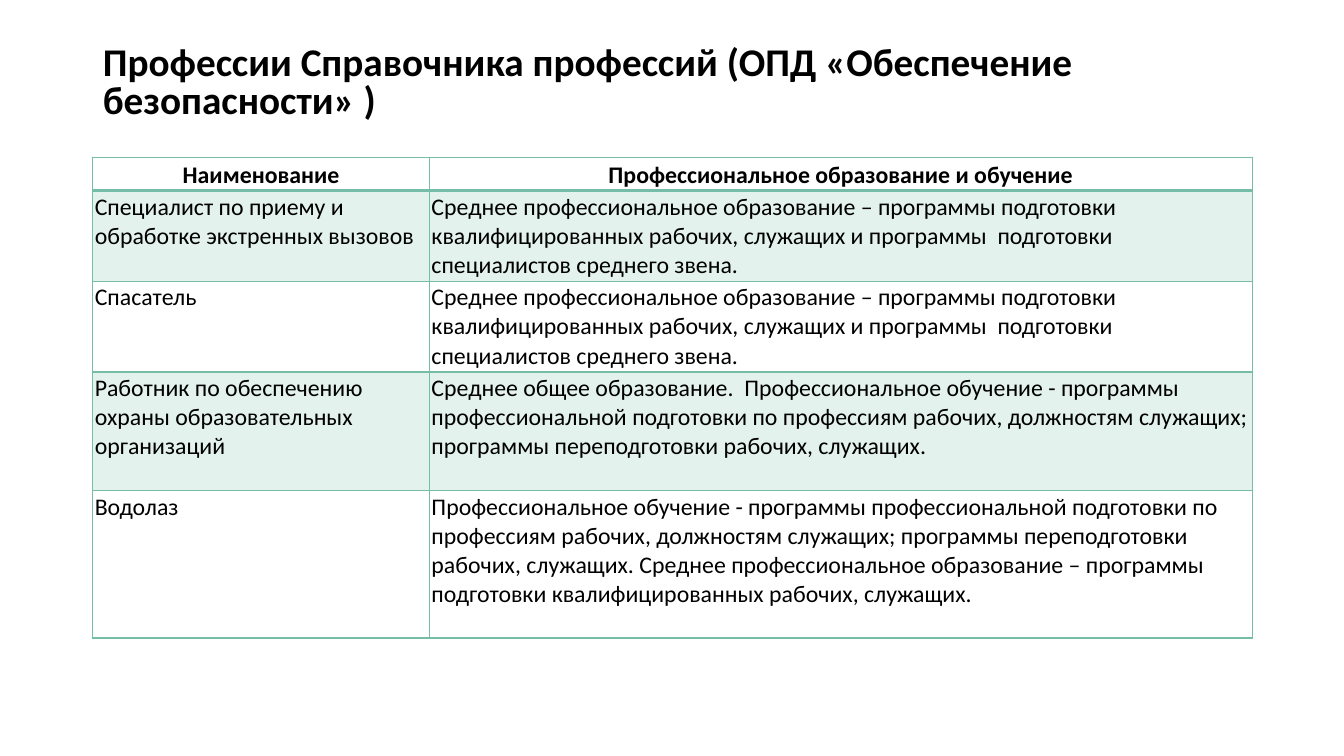
"""Build the slide with a table of security professions."""
from lxml.etree import SubElement
from pptx import Presentation
from pptx.dml.color import RGBColor
from pptx.enum.text import MSO_ANCHOR as Anchor, MSO_AUTO_SIZE as Fit, PP_ALIGN as Align
from pptx.oxml.ns import qn
from pptx.util import Inches, Pt

TITLE = "Профессии Справочника профессий (ОПД «Обеспечение безопасности» )"
MIDDLE = ("Среднее профессиональное образование – программы подготовки "
          "квалифицированных рабочих, служащих и программы  подготовки "
          "специалистов среднего звена.")
ROWS = [
    ("Наименование", "Профессиональное образование и обучение"),
    ("Специалист по приему и обработке экстренных вызовов", MIDDLE),
    ("Спасатель", MIDDLE),
    ("Работник по обеспечению охраны образовательных организаций",
     "Среднее общее образование.  Профессиональное обучение - программы "
     "профессиональной подготовки по профессиям рабочих, должностям служащих; "
     "программы переподготовки рабочих, служащих."),
    ("Водолаз",
     "Профессиональное обучение - программы профессиональной подготовки по "
     "профессиям рабочих, должностям служащих; программы переподготовки рабочих, "
     "служащих. Среднее профессиональное образование – программы подготовки "
     "квалифицированных рабочих, служащих."),
]
WIDTHS = [3.34, 8.16]
HEIGHTS = [0.33, 0.9, 0.9, 1.18, 1.46]
LEFT, WIDTH = 0.92, sum(WIDTHS)
GREEN, PALE, BLACK = "75BDA7", "E3F2ED", "000000"


def color(code):
    return RGBColor.from_string(code)


def style(para, size, bold, align):
    para.alignment = align
    font = para.font
    font.name, font.size, font.bold = "Calibri", Pt(size), bold
    font.color.rgb = color(BLACK)


def border(cell, side, width):
    line = SubElement(cell._tc.get_or_add_tcPr(), qn(f"a:ln{side}"), w=str(Pt(width)))
    fill = SubElement(line, qn("a:solidFill"))
    SubElement(fill, qn("a:srgbClr"), val=GREEN)


def add_title(slide):
    title = slide.shapes.title
    title.left, title.top = Inches(LEFT), Inches(0.4)
    title.width, title.height = Inches(WIDTH), Inches(0.87)
    frame = title.text_frame
    frame.text = TITLE
    frame.word_wrap, frame.auto_size = True, Fit.NONE
    frame.vertical_anchor = Anchor.MIDDLE
    para = frame.paragraphs[0]
    style(para, 28, True, Align.LEFT)
    para.line_spacing, para.space_after = 0.8, Pt(6)


def fill_cell(cell, text, row):
    head = row == 0
    cell.text = text
    cell.margin_left = cell.margin_right = cell.margin_top = Inches(0.02)
    cell.margin_bottom = 0
    cell.vertical_anchor = Anchor.MIDDLE if head else Anchor.TOP
    style(cell.text_frame.paragraphs[0], 17, head, Align.CENTER if head else Align.LEFT)
    for side in "LRTB":
        thick = (row, side) in ((0, "B"), (1, "T"))
        border(cell, side, 2 if thick else 1)
    if row % 2:
        cell.fill.solid()
        cell.fill.fore_color.rgb = color(PALE)
    else:
        cell.fill.background()


def add_grid(slide):
    table = slide.shapes.add_table(
        len(ROWS), len(WIDTHS), Inches(LEFT), Inches(1.56),
        Inches(WIDTH), Inches(sum(HEIGHTS))).table
    table.horz_banding = False
    for col, width in zip(table.columns, WIDTHS):
        col.width = Inches(width)
    for row, (texts, height) in enumerate(zip(ROWS, HEIGHTS)):
        table.rows[row].height = Inches(height)
        for col, text in enumerate(texts):
            fill_cell(table.cell(row, col), text, row)


def main():
    deck = Presentation()
    deck.slide_width, deck.slide_height = Inches(13.33), Inches(7.5)
    slide = deck.slides.add_slide(deck.slide_layouts[5])
    add_title(slide)
    add_grid(slide)
    deck.save("out.pptx")


if __name__ == "__main__":
    main()
